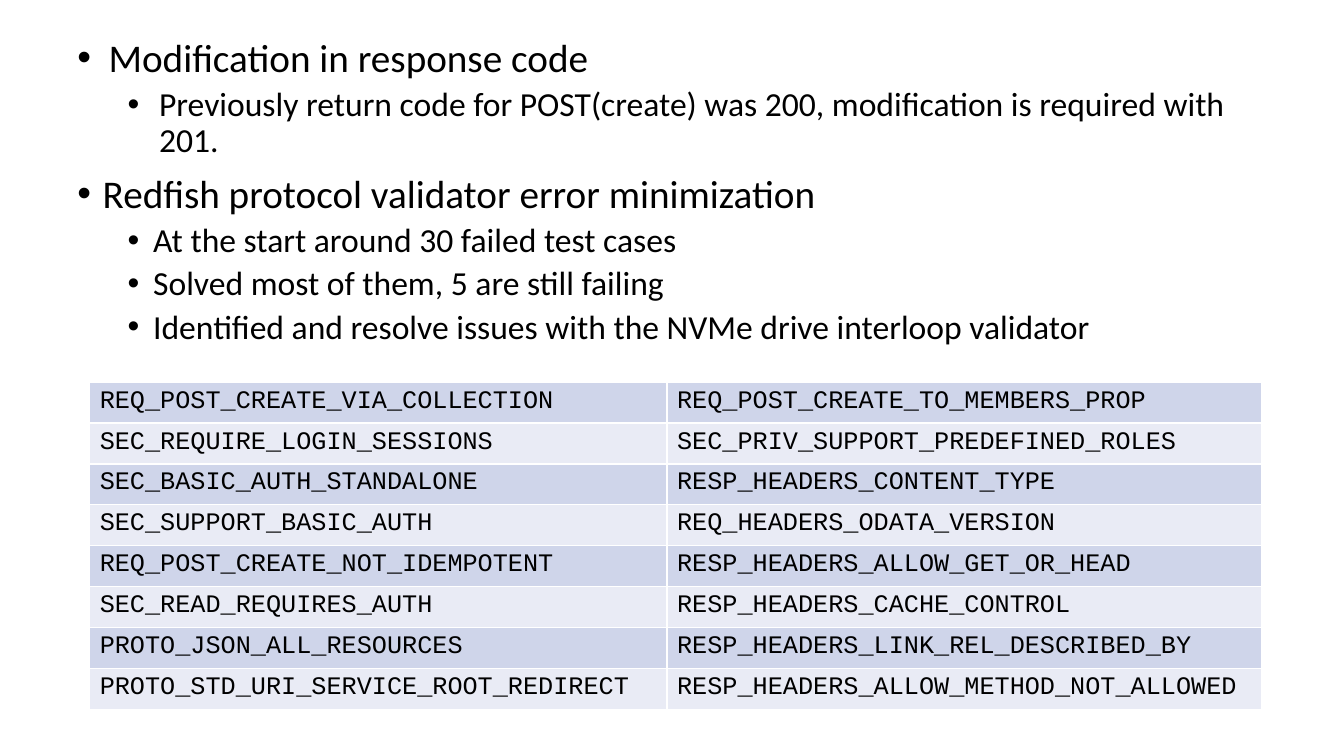
from dataclasses import dataclass

from lxml import etree
from pptx import Presentation
from pptx.dml.color import RGBColor
from pptx.enum.text import MSO_ANCHOR
from pptx.oxml.ns import qn
from pptx.util import Cm, Pt

TOP = MSO_ANCHOR.TOP
BLANK_LAYOUT = 6


@dataclass(frozen=True)
class Theme:
    text: RGBColor = RGBColor(0x00, 0x00, 0x00)
    bands: tuple[RGBColor, ...] = (RGBColor(0xCF, 0xD5, 0xEA), RGBColor(0xE9, 0xEB, 0xF5))
    border: str = "FFFFFF"
    body_font: str = "Calibri"
    code_font: str = "Courier New"
    level_sizes: tuple[Pt, ...] = (Pt(28), Pt(24))
    level_spacing: tuple[Pt, ...] = (Pt(10), Pt(5))
    code_size: Pt = Pt(18)
    border_width: Pt = Pt(1)


@dataclass(frozen=True)
class Bullet:
    text: str
    level: int = 0
    hanging: Cm = Cm(0.64)


THEME = Theme()
LEVEL_STEP = Cm(1.27)
WIDE_HANGING = Cm(0.79)

BULLETS = (
    Bullet("Modification in response code", hanging=WIDE_HANGING),
    Bullet("Previously return code for POST(create) was 200, modification is required with 201.",
           1, WIDE_HANGING),
    Bullet("Redfish protocol validator error minimization"),
    Bullet("At the start around 30 failed test cases", 1),
    Bullet("Solved most of them, 5 are still failing", 1),
    Bullet("Identified and resolve issues with the NVMe drive interloop validator", 1),
)

TEST_CASES = (
    ("REQ_POST_CREATE_VIA_COLLECTION", "REQ_POST_CREATE_TO_MEMBERS_PROP"),
    ("SEC_REQUIRE_LOGIN_SESSIONS", "SEC_PRIV_SUPPORT_PREDEFINED_ROLES"),
    ("SEC_BASIC_AUTH_STANDALONE", "RESP_HEADERS_CONTENT_TYPE"),
    ("SEC_SUPPORT_BASIC_AUTH", "REQ_HEADERS_ODATA_VERSION"),
    ("REQ_POST_CREATE_NOT_IDEMPOTENT", "RESP_HEADERS_ALLOW_GET_OR_HEAD"),
    ("SEC_READ_REQUIRES_AUTH", "RESP_HEADERS_CACHE_CONTROL"),
    ("PROTO_JSON_ALL_RESOURCES", "RESP_HEADERS_LINK_REL_DESCRIBED_BY"),
    ("PROTO_STD_URI_SERVICE_ROOT_REDIRECT", "RESP_HEADERS_ALLOW_METHOD_NOT_ALLOWED"),
)
COLUMN_WIDTHS = (Cm(14.55), Cm(14.99))
ROW_HEIGHT = Cm(1.03)


def set_font(para, name: str, size: Pt) -> None:
    para.font.name = name
    para.font.size = size
    para.font.color.rgb = THEME.text


def set_bullet(para, bullet: Bullet) -> None:
    properties = para._p.get_or_add_pPr()
    properties.set("marL", str(bullet.level * LEVEL_STEP + bullet.hanging))
    properties.set("indent", str(-bullet.hanging))
    etree.SubElement(properties, qn("a:buFont"), typeface="Arial")
    etree.SubElement(properties, qn("a:buChar"), char="•")


def set_borders(cell) -> None:
    properties = cell._tc.get_or_add_tcPr()
    for side in ("lnL", "lnR", "lnT", "lnB"):
        line = etree.SubElement(properties, qn(f"a:{side}"), w=str(THEME.border_width))
        fill = etree.SubElement(line, qn("a:solidFill"))
        etree.SubElement(fill, qn("a:srgbClr"), val=THEME.border)


def add_bullets(page) -> None:
    box = page.shapes.add_textbox(Cm(1.7), Cm(0.84), Cm(30.66), Cm(17.55))
    frame = box.text_frame
    frame.word_wrap = True
    frame.vertical_anchor = TOP
    for index, bullet in enumerate(BULLETS):
        para = frame.add_paragraph() if index else frame.paragraphs[0]
        para.text = bullet.text
        para.level = bullet.level
        para.line_spacing = 0.9
        para.space_before = THEME.level_spacing[bullet.level]
        set_bullet(para, bullet)
        set_font(para, THEME.body_font, THEME.level_sizes[bullet.level])


def add_test_cases(page) -> None:
    row_count = len(TEST_CASES)
    table = page.shapes.add_table(row_count, len(COLUMN_WIDTHS), Cm(2.26), Cm(9.63),
                                  sum(COLUMN_WIDTHS), ROW_HEIGHT * row_count).table
    table.first_row = False
    table.horz_banding = False
    for column, width in zip(table.columns, COLUMN_WIDTHS):
        column.width = width
    for row_index, names in enumerate(TEST_CASES):
        for column_index, name in enumerate(names):
            cell = table.cell(row_index, column_index)
            cell.text = name
            set_font(cell.text_frame.paragraphs[0], THEME.code_font, THEME.code_size)
            set_borders(cell)
            cell.fill.solid()
            cell.fill.fore_color.rgb = THEME.bands[row_index % len(THEME.bands)]


def main() -> None:
    deck = Presentation()
    deck.slide_width, deck.slide_height = Cm(33.87), Cm(19.05)
    page = deck.slides.add_slide(deck.slide_layouts[BLANK_LAYOUT])

    # Findings
    add_bullets(page)

    # Validator test cases
    add_test_cases(page)

    deck.save("out.pptx")


if __name__ == "__main__":
    main()
